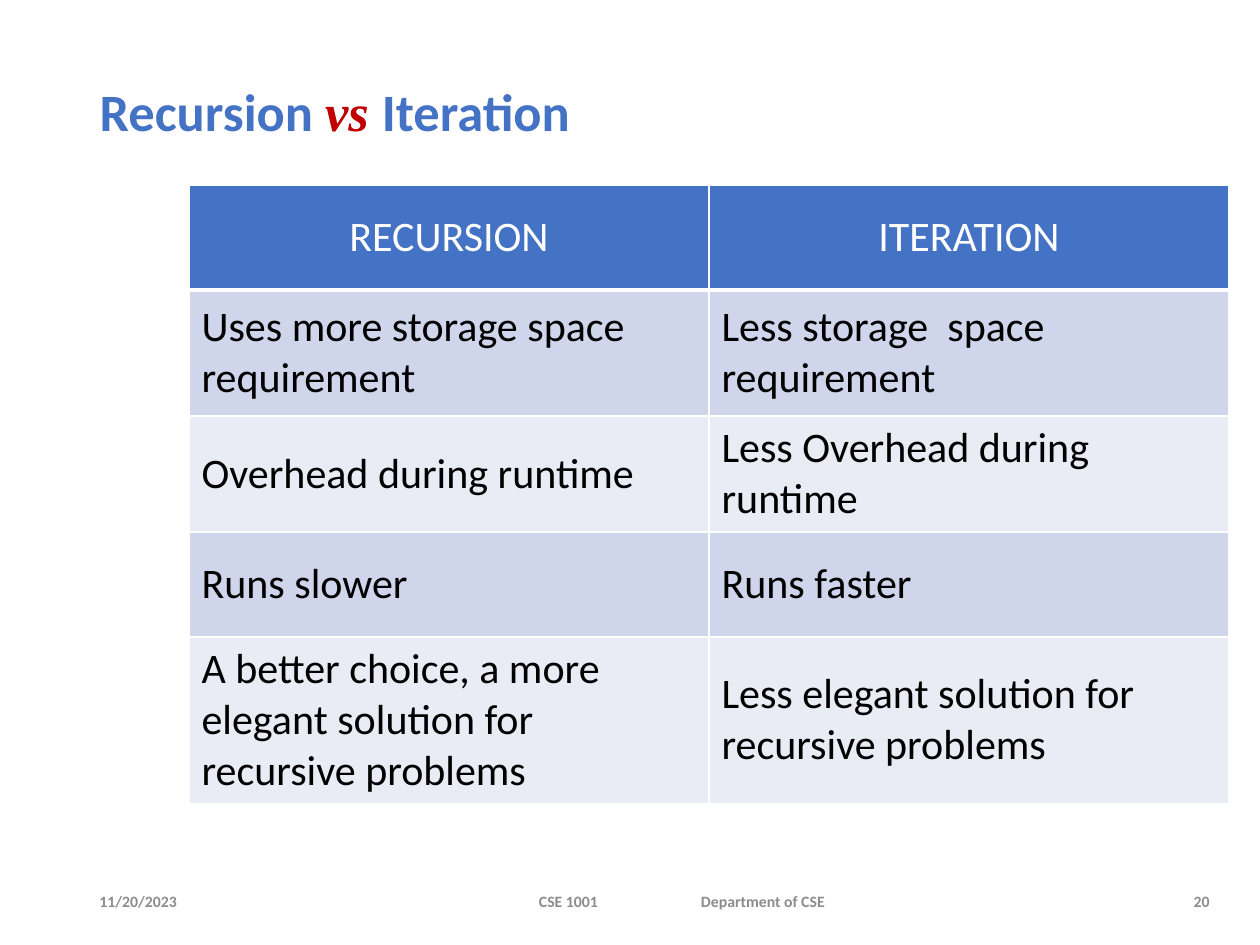
from dataclasses import dataclass

from lxml.etree import SubElement
from pptx import Presentation
from pptx.dml.color import RGBColor
from pptx.enum.text import MSO_ANCHOR, MSO_AUTO_SIZE, PP_ALIGN
from pptx.oxml.ns import qn
from pptx.util import Pt

SCALE = 914400 / 126


@dataclass(frozen=True)
class Theme:
    blue: str = "4472C4"
    red: str = "C00000"
    ink: str = "000000"
    white: str = "FFFFFF"
    gray: str = "8C8C8C"
    bands: tuple = ("CFD5EA", "E9EBF5")
    sans: str = "Calibri"
    serif: str = "Times New Roman"
    head: int = 30
    body: int = 24
    foot: int = 9


THEME = Theme()
ROWS = [
    ("RECURSION", "ITERATION"),
    ("Uses more storage space requirement", "Less storage  space requirement"),
    ("Overhead during runtime", "Less Overhead during runtime"),
    ("Runs slower", "Runs faster"),
    ("A better choice, a more elegant solution for recursive problems",
     "Less elegant solution for recursive problems"),
]
HEIGHTS = (105, 126, 116, 105, 126)


def px(n):
    return round(n * SCALE)


def place(shape, x, y, w, h):
    shape.left, shape.top, shape.width, shape.height = map(px, (x, y, w, h))


def write(para, text, size, color, face=THEME.sans, bold=False, italic=False,
          align=PP_ALIGN.LEFT):
    para.alignment = align
    run = para.add_run()
    run.text = text
    font = run.font
    font.size, font.name = Pt(size), face
    font.bold, font.italic = bold, italic
    font.color.rgb = RGBColor.from_string(color)


def edge(cell, side, width):
    """Draw one white border of a cell; side is L, R, T or B."""
    line = SubElement(cell._tc.get_or_add_tcPr(), qn("a:ln" + side), w=str(Pt(width)))
    fill = SubElement(line, qn("a:solidFill"))
    SubElement(fill, qn("a:srgbClr"), val=THEME.white)


def add_title(slide):
    title = slide.shapes.title
    place(title, 87, 71, 1136, 87)
    frame = title.text_frame
    frame.auto_size = MSO_AUTO_SIZE.NONE
    frame.vertical_anchor = MSO_ANCHOR.MIDDLE
    para = frame.paragraphs[0]
    para.line_spacing = 0.9
    write(para, "Recursion ", THEME.head, THEME.blue, bold=True)
    write(para, "vs ", THEME.head, THEME.red, face=THEME.serif, bold=True, italic=True)
    write(para, "Iteration", THEME.head, THEME.blue, bold=True)


def fill_cell(cell, text, row):
    top = row == 0
    for side in "LRTB":
        edge(cell, side, 3 if top and side == "B" else 1)
    cell.fill.solid()
    back = THEME.blue if top else THEME.bands[(row - 1) % 2]
    cell.fill.fore_color.rgb = RGBColor.from_string(back)
    cell.vertical_anchor = MSO_ANCHOR.MIDDLE
    write(cell.text_frame.paragraphs[0], text, THEME.body,
          THEME.white if top else THEME.ink,
          align=PP_ALIGN.CENTER if top else PP_ALIGN.LEFT)


def add_grid(slide):
    frame = slide.shapes.add_table(len(ROWS), 2, px(189), px(185), px(1040),
                                   px(sum(HEIGHTS)))
    table = frame.table
    table.horz_banding = False
    for row, (texts, high) in enumerate(zip(ROWS, HEIGHTS)):
        table.rows[row].height = px(high)
        for col, text in enumerate(texts):
            fill_cell(table.cell(row, col), text, row)


def add_foot(slide, text, x, w, align=PP_ALIGN.LEFT, inset=None, tab=None):
    box = slide.shapes.add_textbox(px(x), px(876), px(w), px(50))
    frame = box.text_frame
    frame.word_wrap = True
    frame.vertical_anchor = MSO_ANCHOR.MIDDLE
    para = frame.paragraphs[0]
    if inset:
        frame.margin_left = px(inset)
    if tab:
        stops = SubElement(para._p.get_or_add_pPr(), qn("a:tabLst"))
        SubElement(stops, qn("a:tab"), pos=str(px(tab)), algn="l")
    write(para, text, THEME.foot, THEME.gray, bold=True, align=align)


def main():
    deck = Presentation()
    deck.slide_width, deck.slide_height = px(1260), px(945)
    slide = deck.slides.add_slide(deck.slide_layouts[5])
    add_title(slide)
    add_grid(slide)
    add_foot(slide, "11/20/2023", 87, 120)
    add_foot(slide, "CSE 1001\tDepartment of CSE", 228, 907, inset=311, tab=162)
    add_foot(slide, "20", 1173, 49, align=PP_ALIGN.RIGHT)
    deck.save("out.pptx")


if __name__ == "__main__":
    main()
